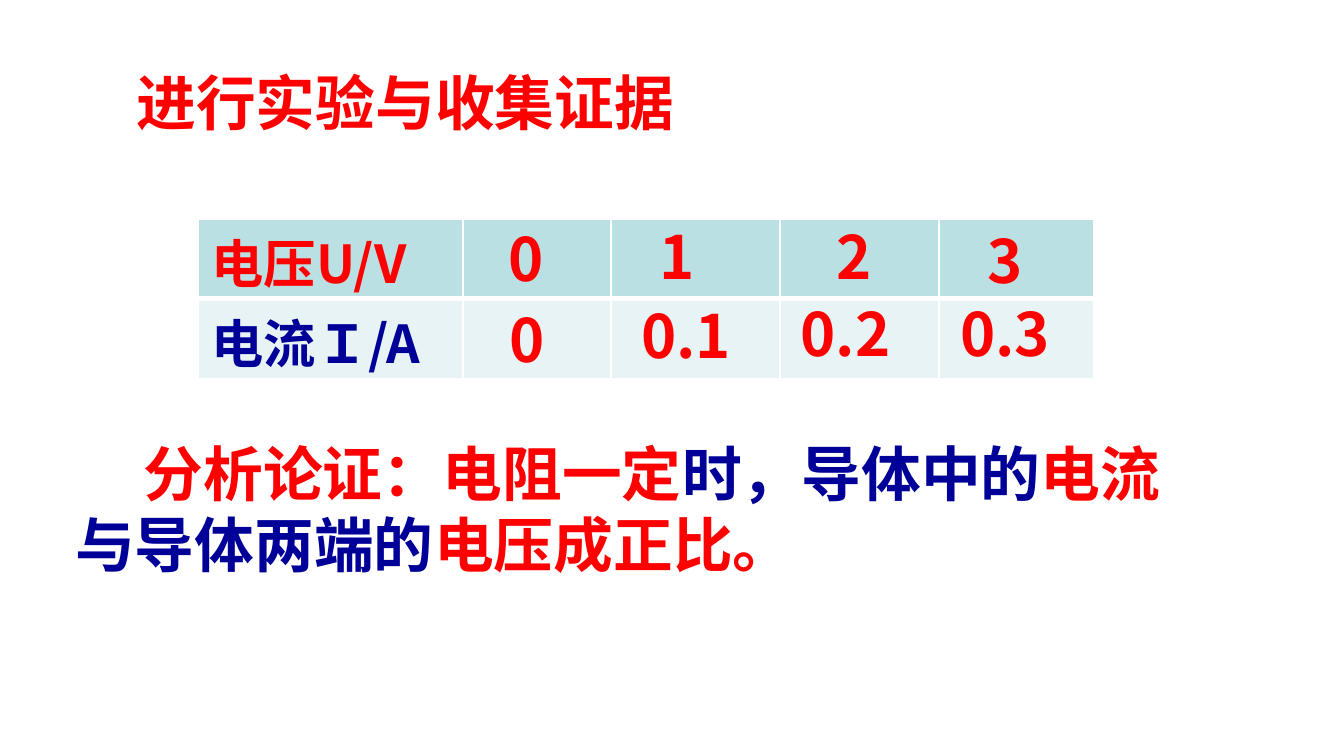
from dataclasses import dataclass

import pptx
import pptx.dml.color
import pptx.enum.text
import pptx.oxml
import pptx.oxml.ns
import pptx.util

WIDTH = 10
HEIGHT = WIDTH * 9 / 16
FONT = "Noto Sans CJK SC"
COLORS = {"red": "FF0000", "navy": "000099", "header": "BBE0E3", "body": "E7F3F4", "rule": "FFFFFF"}


@dataclass(frozen=True)
class Area:
    """Left, top, width and height in percent of the slide."""
    left: float
    top: float
    width: float
    height: float

    def emu(self) -> tuple:
        return (across(self.left), down(self.top), across(self.width), down(self.height))


@dataclass(frozen=True)
class Reading:
    text: str
    area: Area


@dataclass(frozen=True)
class Quantity:
    label: str
    color: str
    fill: str
    rule_above: float
    rule_below: float


def across(percent: float) -> int:
    return pptx.util.Inches(WIDTH * percent / 100)


def down(percent: float) -> int:
    return pptx.util.Inches(HEIGHT * percent / 100)


def rgb(name: str) -> pptx.dml.color.RGBColor:
    return pptx.dml.color.RGBColor.from_string(COLORS[name])


def write(frame, *parts: tuple[str, str], size: float = 32, indent: float = 0) -> None:
    paragraph = frame.paragraphs[0]
    paragraph.alignment = pptx.enum.text.PP_ALIGN.LEFT
    properties = paragraph._p.get_or_add_pPr()
    properties.set("marL", "0")
    properties.set("indent", str(across(indent)))
    for text, color in parts:
        run = paragraph.add_run()
        run.text = text
        run.font.name = FONT
        run.font.size = pptx.util.Pt(size)
        run.font.bold = True
        run.font.color.rgb = rgb(color)
        east_asian = pptx.oxml.parse_xml(
            f'<a:ea {pptx.oxml.ns.nsdecls("a")} typeface="{FONT}"/>')
        run.font._element.find(pptx.oxml.ns.qn("a:latin")).addnext(east_asian)


def fit(shape, area: Area):
    shape.left, shape.top, shape.width, shape.height = area.emu()
    frame = shape.text_frame
    frame.word_wrap = True
    frame.auto_size = pptx.enum.text.MSO_AUTO_SIZE.NONE
    frame.vertical_anchor = pptx.enum.text.MSO_ANCHOR.TOP
    frame.margin_left = frame.margin_right = pptx.util.Inches(0.07)
    frame.margin_top = frame.margin_bottom = pptx.util.Inches(0.04)
    return frame


def add_text(slide, area: Area, *parts: tuple[str, str], indent: float = 0) -> None:
    write(fit(slide.shapes.add_textbox(*area.emu()), area), *parts, indent=indent)


def rule_cell(cell, above: float, below: float) -> None:
    properties = cell._tc.get_or_add_tcPr()
    widths = {"lnL": 1, "lnR": 1, "lnT": above, "lnB": below}
    for position, (side, points) in enumerate(widths.items()):
        properties.insert(position, pptx.oxml.parse_xml(
            f'<a:{side} {pptx.oxml.ns.nsdecls("a")} w="{pptx.util.Pt(points)}"><a:solidFill>'
            f'<a:srgbClr val="{COLORS["rule"]}"/></a:solidFill></a:{side}>'))


def add_measurements(slide, area: Area, columns: list[float], quantities: list[Quantity]) -> None:
    measurements = slide.shapes.add_table(len(quantities), len(columns), *area.emu()).table
    for column, share in zip(measurements.columns, columns):
        column.width = across(share)
    for row, quantity in zip(measurements.rows, quantities):
        row.height = down(area.height / len(quantities))
        for cell in row.cells:
            cell.margin_top = pptx.util.Inches(0.03)
            cell.margin_bottom = 0
            cell.fill.solid()
            cell.fill.fore_color.rgb = rgb(quantity.fill)
            rule_cell(cell, quantity.rule_above, quantity.rule_below)
        write(row.cells[0].text_frame, (quantity.label, quantity.color), size=28)


QUANTITIES = [
    Quantity("电压U/V", "red", "header", 1, 3),
    Quantity("电流Ｉ/A", "navy", "body", 3, 1),
]
READINGS = [
    Reading("0", Area(37.1, 28.6, 6.9, 10.9)),
    Reading("0", Area(37.2, 39.4, 6.9, 10.9)),
    Reading("1", Area(48.35, 28.3, 10.4, 10.9)),
    Reading("0.1", Area(47, 38.75, 10.4, 10.9)),
    Reading("2", Area(61.55, 28.3, 9.2, 10.9)),
    Reading("0.2", Area(58.85, 38.55, 9.2, 10.9)),
    Reading("3", Area(72.75, 28.9, 6.4, 10.9)),
    Reading("0.3", Area(70.75, 38.55, 9.2, 10.9)),
]
CONCLUSION = [
    ("分析论证：电阻一定", "red"),
    ("时，导体中的", "navy"),
    ("电流", "red"),
    ("与导体两端的", "navy"),
    ("电压成正比。", "red"),
]


def main() -> None:
    deck = pptx.Presentation()
    deck.slide_width, deck.slide_height = across(100), down(100)
    slide = deck.slides.add_slide(deck.slide_layouts.get_by_name("Title Only"))
    heading = fit(slide.shapes.title, Area(4.35, 8, 56.7, 10.9))
    write(heading, ("进行实验与收集证据", "red"), indent=5.1)
    add_measurements(slide, Area(14.75, 29, 66.6, 20.1), [19.7, 11, 12.6, 11.8, 11.5], QUANTITIES)
    for reading in READINGS:
        add_text(slide, reading.area, (reading.text, "red"))
    add_text(slide, Area(4.9, 57, 86.3, 20.5), *CONCLUSION, indent=5.1)
    deck.save("out.pptx")


if __name__ == "__main__":
    main()
